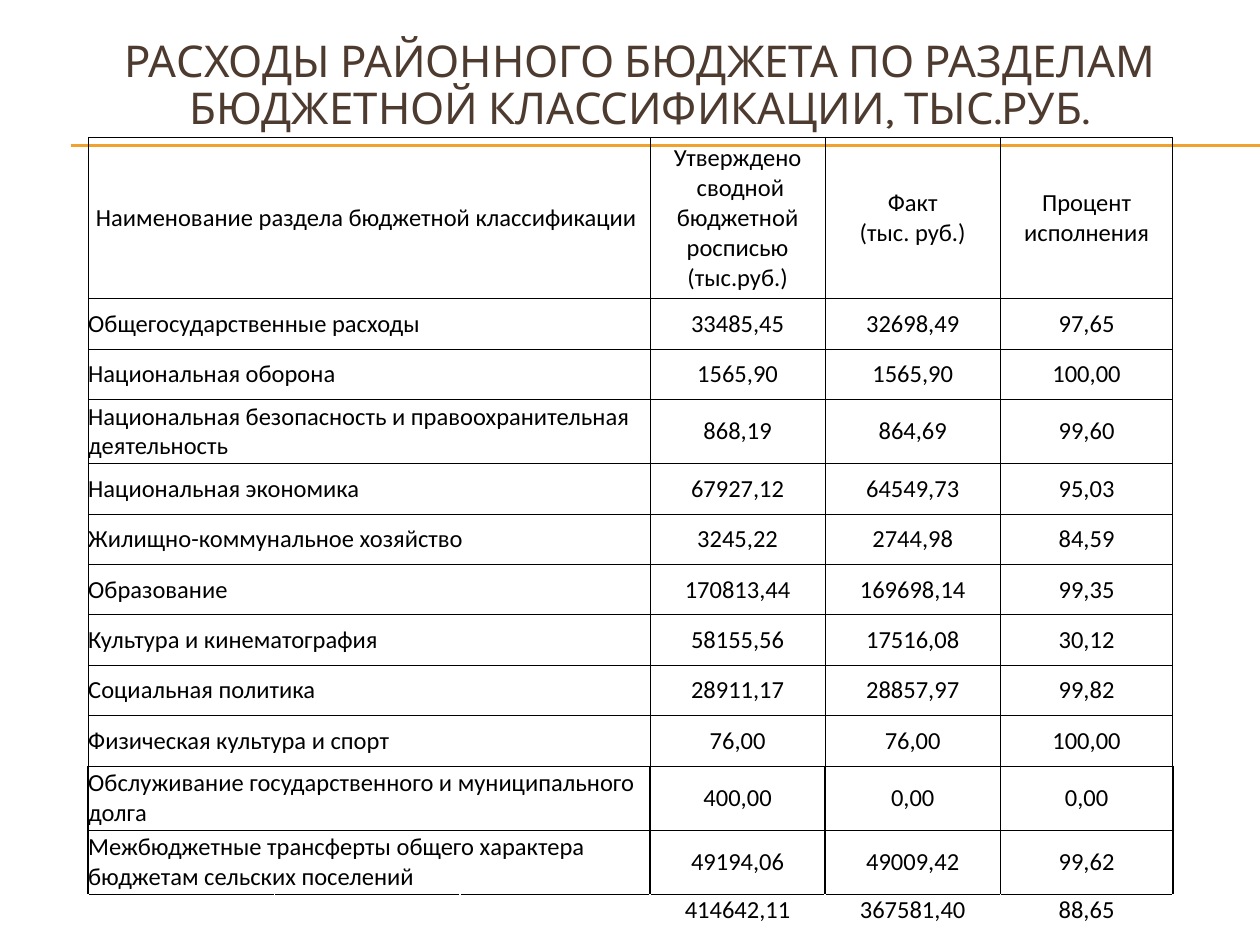
from typing import NamedTuple

from lxml import etree
from pptx import Presentation
from pptx.dml.color import RGBColor
from pptx.enum.shapes import MSO_CONNECTOR
from pptx.enum.text import MSO_ANCHOR, MSO_AUTO_SIZE, PP_ALIGN
from pptx.oxml.ns import qn
from pptx.util import Inches, Pt

LEFT, CENTER = PP_ALIGN.LEFT, PP_ALIGN.CENTER
MIDDLE = MSO_ANCHOR.MIDDLE
STRAIGHT = MSO_CONNECTOR.STRAIGHT
BLACK, BROWN, GOLD = "000000", "4E3B30", "F0A22E"
TITLE = "РАСХОДЫ РАЙОННОГО БЮДЖЕТА ПО РАЗДЕЛАМ БЮДЖЕТНОЙ КЛАССИФИКАЦИИ, ТЫС.РУБ."
WIDTHS = (1.48, 1.47, 1.51, 1.39, 1.39, 1.37)
SIDES = {"L": 1, "R": 1, "T": 0.5, "B": 0.5}
THIN = dict.fromkeys(SIDES, 0.5)


class Entry(NamedTuple):
    name: str
    plan: str
    fact: str
    share: str
    height: float = 0.4
    edges: dict[str, float] = THIN


ENTRIES = (
    Entry("Наименование раздела бюджетной классификации ",
          "Утверждено\n сводной бюджетной росписью\n(тыс.руб.)",
          "Факт\n(тыс. руб.)", "Процент исполнения", 1.28),
    Entry("Общегосударственные расходы", "33485,45", "32698,49", "97,65"),
    Entry("Национальная оборона", "1565,90", "1565,90", "100,00"),
    Entry("Национальная безопасность и правоохранительная деятельность",
          "868,19", "864,69", "99,60", 0.51),
    Entry("Национальная экономика", "67927,12", "64549,73", "95,03"),
    Entry("Жилищно-коммунальное хозяйство", "3245,22", "2744,98", "84,59"),
    Entry("Образование", "170813,44", "169698,14", "99,35"),
    Entry("Культура и кинематография", "58155,56", "17516,08", "30,12"),
    Entry("Социальная политика", "28911,17", "28857,97", "99,82"),
    Entry("Физическая культура и спорт", "76,00", "76,00", "100,00"),
    Entry("Обслуживание государственного и муниципального долга",
          "400,00", "0,00", "0,00", 0.51, SIDES),
    Entry("Межбюджетные трансферты общего характера бюджетам сельских поселений",
          "49194,06", "49009,42", "99,62", 0.51, SIDES | {"B": 1}),
    Entry("", "414642,11", "367581,40", "88,65", 0.24, {"T": 1}),
)


def paint(hue: str) -> RGBColor:
    """Turn a hex string into a colour."""
    return RGBColor.from_string(hue)


def style(font, face: str, size: float, hue: str) -> None:
    """Set the face, size and colour of a font."""
    for key, value in {"name": face, "size": Pt(size), "bold": False}.items():
        setattr(font, key, value)
    font.color.rgb = paint(hue)


def draw_rule(slide, top: float) -> None:
    """Draw a gold rule to the right edge of the slide."""
    rule = slide.shapes.add_connector(
        STRAIGHT, Inches(0.56), Inches(top), Inches(10), Inches(top))
    rule.line.color.rgb = paint(GOLD)
    rule.line.width = Pt(0.75)
    etree.SubElement(rule._element.spPr, qn("a:effectLst"))


def draw_title(slide) -> None:
    """Place the title in front of the rules."""
    title = slide.shapes.title
    box = {"left": 0.33, "top": 0.23, "width": 9.5, "height": 0.92}
    for key, value in box.items():
        setattr(title, key, Inches(value))
    frame = title.text_frame
    frame.text = TITLE
    frame.word_wrap = True
    frame.auto_size = MSO_AUTO_SIZE.NONE
    frame.vertical_anchor = MIDDLE
    para = frame.paragraphs[0]
    para.alignment = CENTER
    para.line_spacing = 0.9
    style(para.runs[0].font, "Karla", 25, BROWN)
    slide.shapes._spTree.append(title._element)


def frame_cell(cell, edges: dict[str, float]) -> None:
    """Give a cell its borders, clear fill and zero margins."""
    props = cell._tc.get_or_add_tcPr()
    for side, width in edges.items():
        line = etree.SubElement(props, qn(f"a:ln{side}"), w=str(Pt(width)))
        fill = etree.SubElement(line, qn("a:solidFill"))
        etree.SubElement(fill, qn("a:srgbClr"), val=BLACK)
    cell.fill.background()
    for side in ("left", "right", "top", "bottom"):
        setattr(cell, f"margin_{side}", 0)
    cell.vertical_anchor = MIDDLE


def write_cell(cell, text: str, align) -> None:
    """Write the lines of a cell as paragraphs."""
    cell.text = text
    for para in cell.text_frame.paragraphs:
        para.alignment = align
        for run in para.runs:
            style(run.font, "Calibri", 14, BLACK)
        if not para.runs:
            etree.SubElement(para._p, qn("a:endParaRPr"), sz="1400")


def draw_table(slide) -> None:
    """Draw the table of budget sections."""
    table = slide.shapes.add_table(
        len(ENTRIES), len(WIDTHS), Inches(0.7), Inches(1.09),
        Inches(sum(WIDTHS)), Inches(sum(e.height for e in ENTRIES))).table
    table.first_row = table.horz_banding = False
    for col, width in zip(table.columns, WIDTHS):
        col.width = Inches(width)
    for index, entry in enumerate(ENTRIES):
        row = table.rows[index]
        row.height = Inches(entry.height)
        cells = list(row.cells)
        texts = (entry.name, "", "", entry.plan, entry.fact, entry.share)
        for spot, (cell, text) in enumerate(zip(cells, texts)):
            frame_cell(cell, entry.edges)
            write_cell(cell, text, LEFT if index and spot == 0 else CENTER)
        if entry.name:
            cells[0].merge(cells[2])


def main() -> None:
    """Build and save the slide."""
    deck = Presentation()
    deck.slide_width, deck.slide_height = Inches(10), Inches(7.5)
    slide = deck.slides.add_slide(deck.slide_layouts[5])
    for top in (1.15, 1.16):
        draw_rule(slide, top)
    draw_title(slide)
    draw_table(slide)
    deck.save("out.pptx")


if __name__ == "__main__":
    main()
